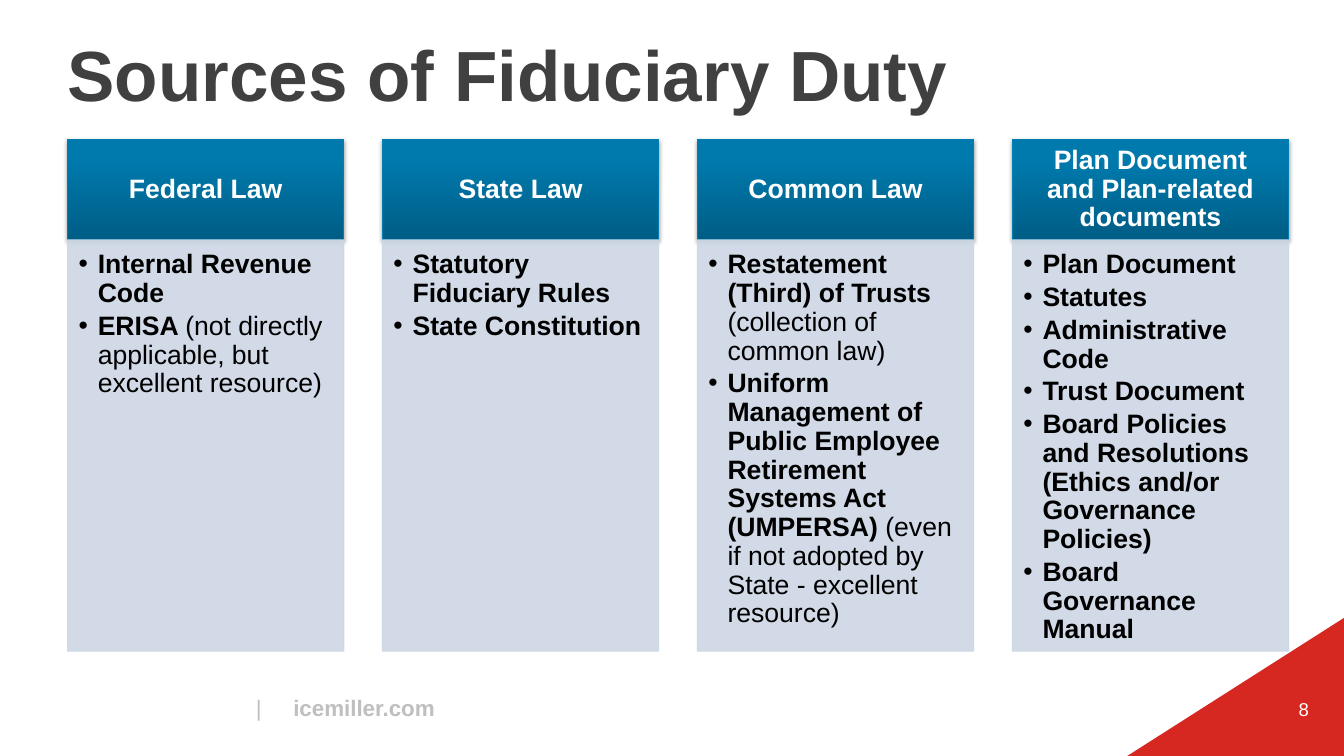
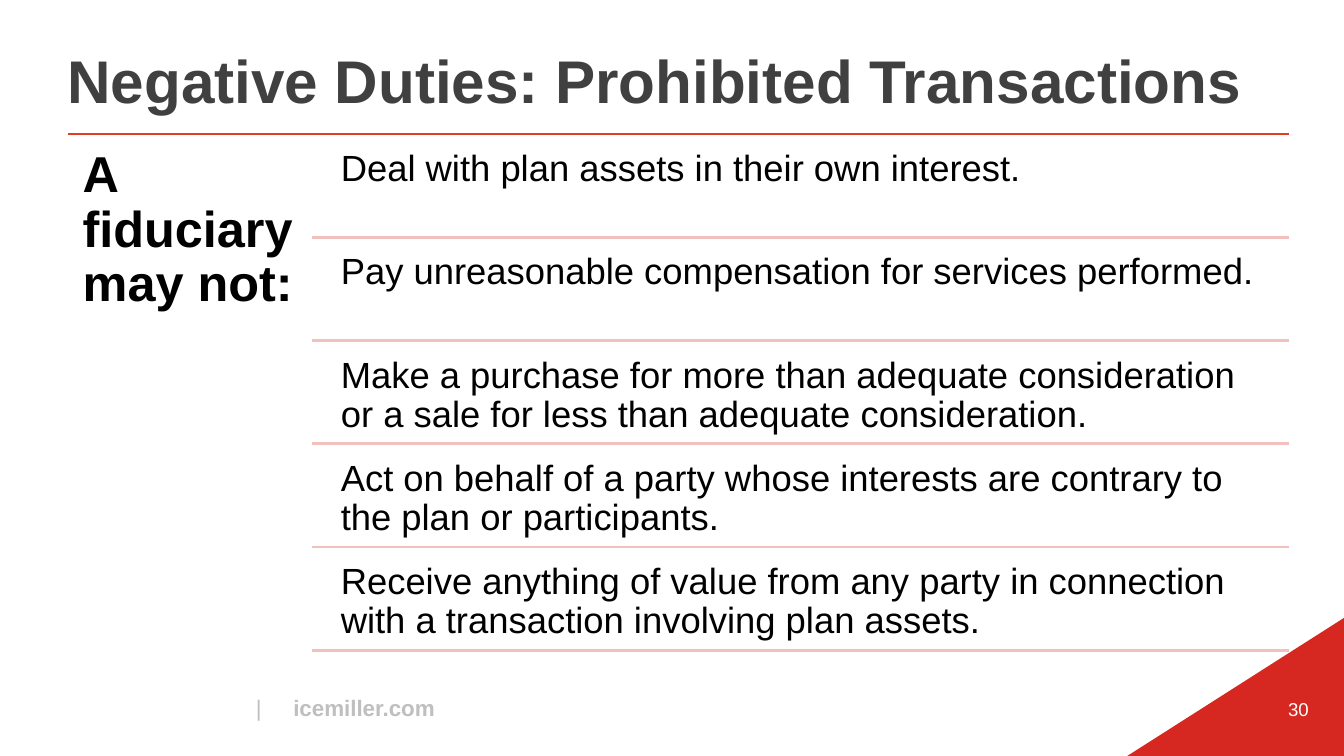
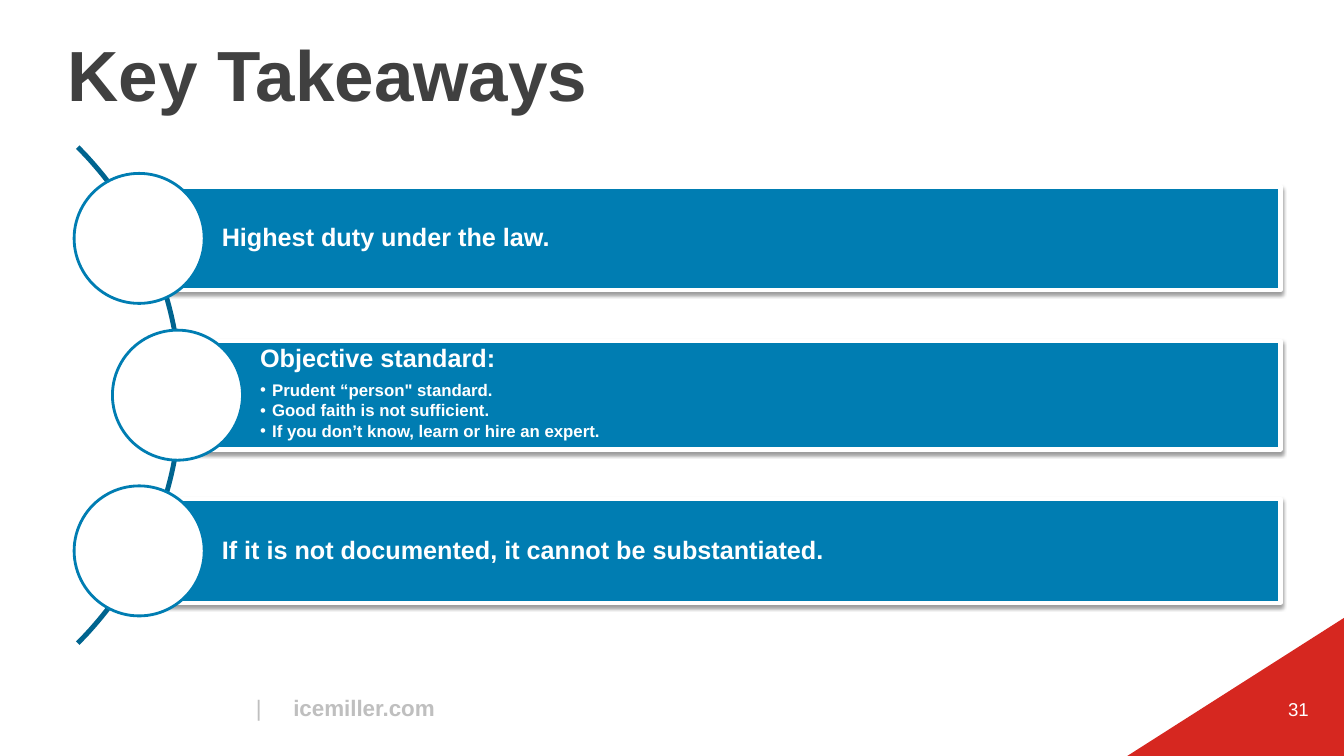
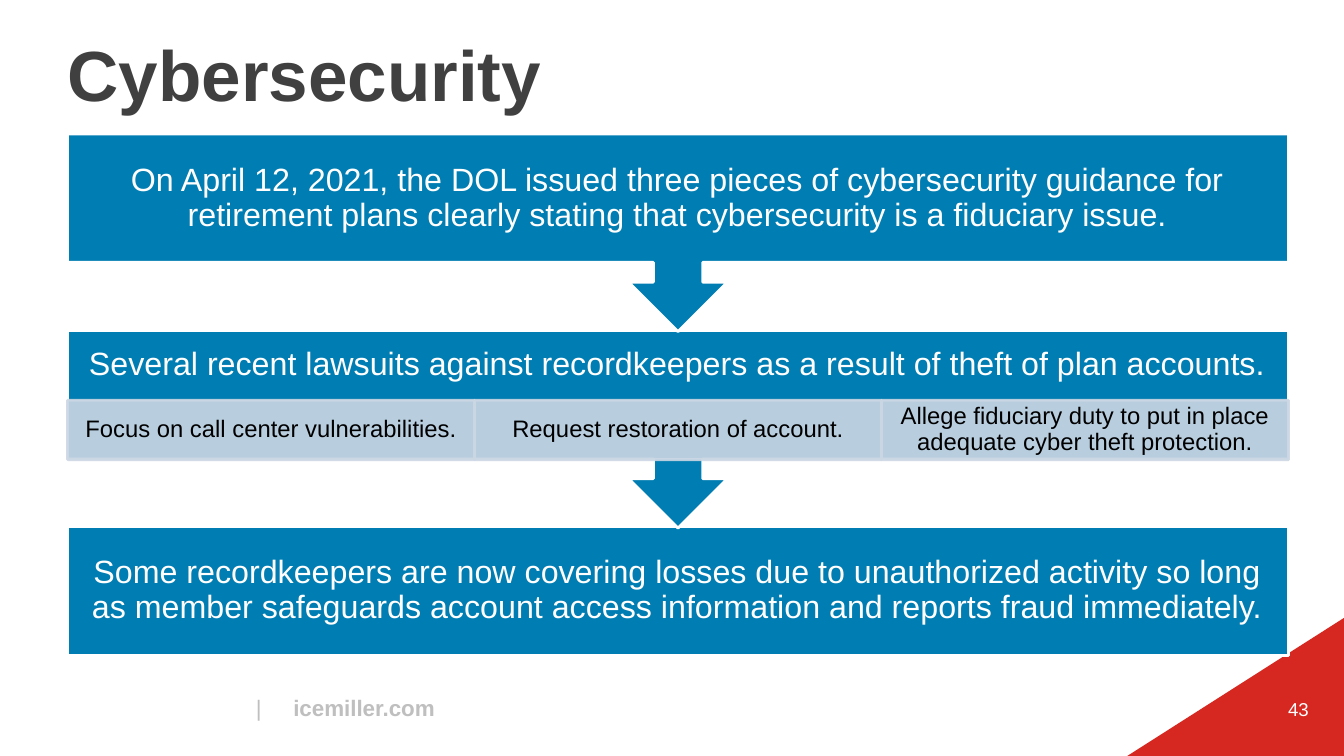
from math import cos, radians, sin

from lxml import etree
from pptx import Presentation
from pptx.dml.color import RGBColor
from pptx.enum.shapes import MSO_CONNECTOR, MSO_SHAPE
from pptx.enum.text import MSO_ANCHOR, PP_ALIGN
from pptx.oxml.ns import qn
from pptx.util import Inches, Pt

RECT = MSO_SHAPE.RECTANGLE
OVAL = MSO_SHAPE.OVAL
WEDGE = MSO_SHAPE.RIGHT_TRIANGLE
CALLOUT = MSO_SHAPE.DOWN_ARROW_CALLOUT
STRAIGHT = MSO_CONNECTOR.STRAIGHT
TOP, MIDDLE, BOTTOM = MSO_ANCHOR.TOP, MSO_ANCHOR.MIDDLE, MSO_ANCHOR.BOTTOM
LEFT, CENTER, RIGHT = PP_ALIGN.LEFT, PP_ALIGN.CENTER, PP_ALIGN.RIGHT

WHITE = RGBColor(0xFF, 0xFF, 0xFF)
BLACK = RGBColor(0x00, 0x00, 0x00)
DARK = RGBColor(0x40, 0x40, 0x40)
GRAY = RGBColor(0xBF, 0xBF, 0xBF)
RED = RGBColor(0xD6, 0x27, 0x20)
ORANGE = RGBColor(0xE3, 0x3D, 0x1F)
PINK = RGBColor(0xF2, 0xC0, 0xBD)
BLUE = RGBColor(0x00, 0x7D, 0xB2)
NAVY = RGBColor(0x00, 0x64, 0x8F)
DEEP = RGBColor(0x00, 0x5D, 0x85)
BRIGHT = RGBColor(0x00, 0x7A, 0xAD)
PALE = RGBColor(0xCC, 0xD7, 0xE4)

FONT = "Arial"
EDGE = 0.67
WIDE = 12.11
END = EDGE + WIDE
PAD = (0.1, 0.05, 0.1, 0.05)


def box(slide, kind, rect, fill=None, line=None, width=2, pad=PAD, anchor=MIDDLE, alpha=None, shade=None):
    place = [Inches(v) for v in rect]
    if kind is None:
        shape = slide.shapes.add_textbox(*place)
    else:
        shape = slide.shapes.add_shape(kind, *place)
        shape.shadow.inherit = False
        shape.fill.solid()
        shape.fill.fore_color.rgb = fill
        if line is None:
            shape.line.fill.background()
        else:
            shape.line.color.rgb = line
            shape.line.width = Pt(width)
    props = shape._element.spPr
    if alpha:
        for color in props.iter(qn("a:srgbClr")):
            etree.SubElement(color, qn("a:alpha"), val=str(alpha * 1000))
    if shade:
        drop = etree.SubElement(props.find(qn("a:effectLst")), qn("a:outerShdw"), blurRad=str(Pt(3.1)),
                                dist=str(Pt(1.7)), dir="5400000", algn="ctr", rotWithShape="0")
        color = etree.SubElement(drop, qn("a:srgbClr"), val="000000")
        etree.SubElement(color, qn("a:alpha"), val=str(shade * 1000))
    frame = shape.text_frame
    frame.word_wrap = True
    frame.vertical_anchor = anchor
    frame.margin_left, frame.margin_top, frame.margin_right, frame.margin_bottom = [Inches(v) for v in pad]
    return shape


def write(shape, text, size, color, bold=False, align=LEFT, spacing=0.9, after=0, bullet=None):
    frame = shape.text_frame
    para = frame.add_paragraph() if frame.text else frame.paragraphs[0]
    if bullet:
        props = para._p.get_or_add_pPr()
        props.set("marL", str(Inches(bullet)))
        props.set("indent", str(-Inches(bullet)))
        etree.SubElement(props, qn("a:buFont"), typeface=FONT)
        etree.SubElement(props, qn("a:buChar"), char="•")
    para.alignment = align
    para.line_spacing = spacing
    para.space_after = Pt(after)
    para.font.name = FONT
    para.font.size = Pt(size)
    para.font.color.rgb = color
    parts = (text,) if isinstance(text, str) else text
    if len(parts) == 1:
        para.font.bold = bold
    for i, part in enumerate(parts):
        run = para.add_run()
        run.text = part
        if len(parts) > 1:
            run.font.bold = bold if i == 0 else not bold
    return para


deck = Presentation()
deck.slide_width = Inches(13.33)
deck.slide_height = Inches(7.5)

pages = []
for title, size, number in [
    ("Sources of Fiduciary Duty", 50.7, "8"),
    ("Negative Duties: Prohibited Transactions", 43, "30"),
    ("Key Takeaways", 50.7, "31"),
    ("Cybersecurity", 50.7, "43"),
]:
    page = deck.slides.add_slide(deck.slide_layouts[6])
    pages.append(page)
    foot = box(page, None, (2.44, 6.84, 2.01, 0.37), anchor=TOP)
    foot.text_frame.word_wrap = False
    para = write(foot, ("|", "\ticemiller.com"), 16, GRAY, spacing=1.0)
    tabs = etree.SubElement(para._p.pPr, qn("a:tabLst"))
    etree.SubElement(tabs, qn("a:tab"), pos=str(Inches(0.37)), algn="l")
    para._p.pPr.find(qn("a:defRPr")).addprevious(tabs)
    wedge = box(page, WEDGE, (11.57, 5.74, 1.37, 2.15), RED)
    wedge.rotation = 270
    write(box(page, None, (12.33, 6.83, 0.75, 0.4)), number, 13.3, WHITE, align=RIGHT, spacing=1.0)
    head = box(page, None, (EDGE, 0.25, 12, 0.9), pad=(0, 0, 0, 0), anchor=BOTTOM)
    write(head, title, size, DARK, bold=True, spacing=Pt(45.3))

sources, duties, keys, cyber = pages

columns = [
    ("Federal Law", ["Internal Revenue Code", ("ERISA ", "(not directly applicable, but excellent resource)")]),
    ("State Law", ["Statutory Fiduciary Rules", "State Constitution"]),
    ("Common Law", [
        ("Restatement (Third) of Trusts ", "(collection of common law)"),
        ("Uniform Management of Public Employee Retirement Systems Act (UMPERSA) ",
         "(even if not adopted by State - excellent resource)"),
    ]),
    ("Plan Document and Plan-related documents", [
        "Plan Document", "Statutes", "Administrative Code", "Trust Document",
        "Board Policies and Resolutions (Ethics and/or Governance Policies)", "Board Governance Manual",
    ]),
]
span = 2.74
step = (WIDE - span) / (len(columns) - 1)
for i, (name, items) in enumerate(columns):
    x = EDGE + i * step
    head = box(sources, RECT, (x, 1.38, span, 1), BLUE, BLUE, 0.75, (0.15, 0.08, 0.15, 0.08), shade=35)
    head.fill.gradient()
    head.fill.gradient_angle = 90
    for stop, color, spot in zip(head.fill.gradient_stops, (DEEP, BRIGHT), (0, 0.8)):
        stop.color.rgb = color
        stop.position = spot
    write(head, name, 19, WHITE, bold=True, align=CENTER)
    body = box(sources, RECT, (x, 2.38, span, 4.08), PALE, PALE, 0.75, (0.11, 0.11, 0.15, 0.17), TOP, alpha=90)
    for item in items:
        write(body, item, 19, BLACK, bold=True, after=2.85, bullet=0.19)

rules = [
    "Deal with plan assets in their own interest.",
    "Pay unreasonable compensation for services performed.",
    "Make a purchase for more than adequate consideration or a sale for less than adequate consideration.",
    "Act on behalf of a party whose interests are contrary to the plan or participants.",
    "Receive anything of value from any party in connection with a transaction involving plan assets.",
]
top = 1.33
step = 5.12 / len(rules)
lead = box(duties, None, (EDGE, top, 2.42, 5.17), pad=(0.15,) * 4, anchor=TOP)
write(lead, "A fiduciary may not:", 36, BLACK, bold=True)
lines = [(EDGE, top, ORANGE)]
for i, rule in enumerate(rules):
    y = top + i * step
    cell = box(duties, None, (3.27, y + 0.05, 9.51, 0.97), pad=(0.11,) * 4, anchor=TOP)
    write(cell, rule, 26, BLACK)
    lines.append((3.09, y + step, PINK))
for x, y, color in lines:
    line = duties.shapes.add_connector(STRAIGHT, Inches(x), Inches(y), Inches(END), Inches(y))
    line.line.color.rgb = color
    line.line.width = Pt(2)
    etree.SubElement(line._element.spPr, qn("a:effectLst"))

mid_x, mid_y, radius = -1.69, 3.92, 3.48
dots = []
for turn in range(-45, 46):
    angle = radians(turn)
    dots.append((Inches(mid_x + radius * cos(angle)), Inches(mid_y + radius * sin(angle))))
curve = keys.shapes.build_freeform(*dots[0])
curve.add_line_segments(dots[1:], close=False)
arc = curve.convert_to_shape()
arc.shadow.inherit = False
arc.fill.background()
arc.line.color.rgb = NAVY
arc.line.width = Pt(3.5)

points = [
    ("Highest duty under the law.", 1.38, 1.85, 1.03, []),
    ("Objective standard:", 1.76, 3.38, 1.08, [
        "Prudent “person\" standard.",
        "Good faith is not sufficient.",
        "If you don’t know, learn or hire an expert.",
    ]),
    ("If it is not documented, it cannot be substantiated.", 1.38, 4.95, 1.03, []),
]
ring = 1.29
for text, x, y, high, items in points:
    bar = box(keys, RECT, (x, y, 12.7 - x, high), BLUE, WHITE, 3, (0.82, 0.05, 0.05, 0.05),
              TOP if items else MIDDLE, shade=38)
    write(bar, text, 18, WHITE, bold=True, after=6.3 if items else 0)
    for item in items:
        write(bar, item, 12, WHITE, bold=True, after=1.8, bullet=0.12)
    box(keys, OVAL, (x - ring / 2, y + (high - ring) / 2, ring, ring), WHITE, BLUE)

claims = [
    "Focus on call center vulnerabilities.",
    "Request restoration of account.",
    "Allege fiduciary duty to put in place adequate cyber theft protection.",
]
steps = [
    (RECT, 5.22, 1.28, 0.18, [],
     "Some recordkeepers are now covering losses due to unauthorized activity so long as member safeguards "
     "account access information and reports fraud immediately."),
    (CALLOUT, 3.28, 1.96, 0.77, claims,
     "Several recent lawsuits against recordkeepers as a result of theft of plan accounts."),
    (CALLOUT, 1.33, 1.96, 0.18, [],
     "On April 12, 2021, the DOL issued three pieces of cybersecurity guidance for retirement plans clearly "
     "stating that cybersecurity is a fiduciary issue."),
]
span = WIDE / len(claims)
for kind, y, high, low, cells, text in steps:
    block = box(cyber, kind, (EDGE, y, WIDE, high), BLUE, WHITE, pad=(0.18, 0.18, 0.18, low))
    write(block, text, 23, WHITE, align=CENTER)
    for i, claim in enumerate(cells):
        cell = box(cyber, RECT, (EDGE + i * span, y + 0.69, span, 0.59), PALE, PALE,
                   pad=(0.13, 0.02, 0.13, 0.02), alpha=90)
        write(cell, claim, 17, BLACK, align=CENTER)

deck.save("out.pptx")
